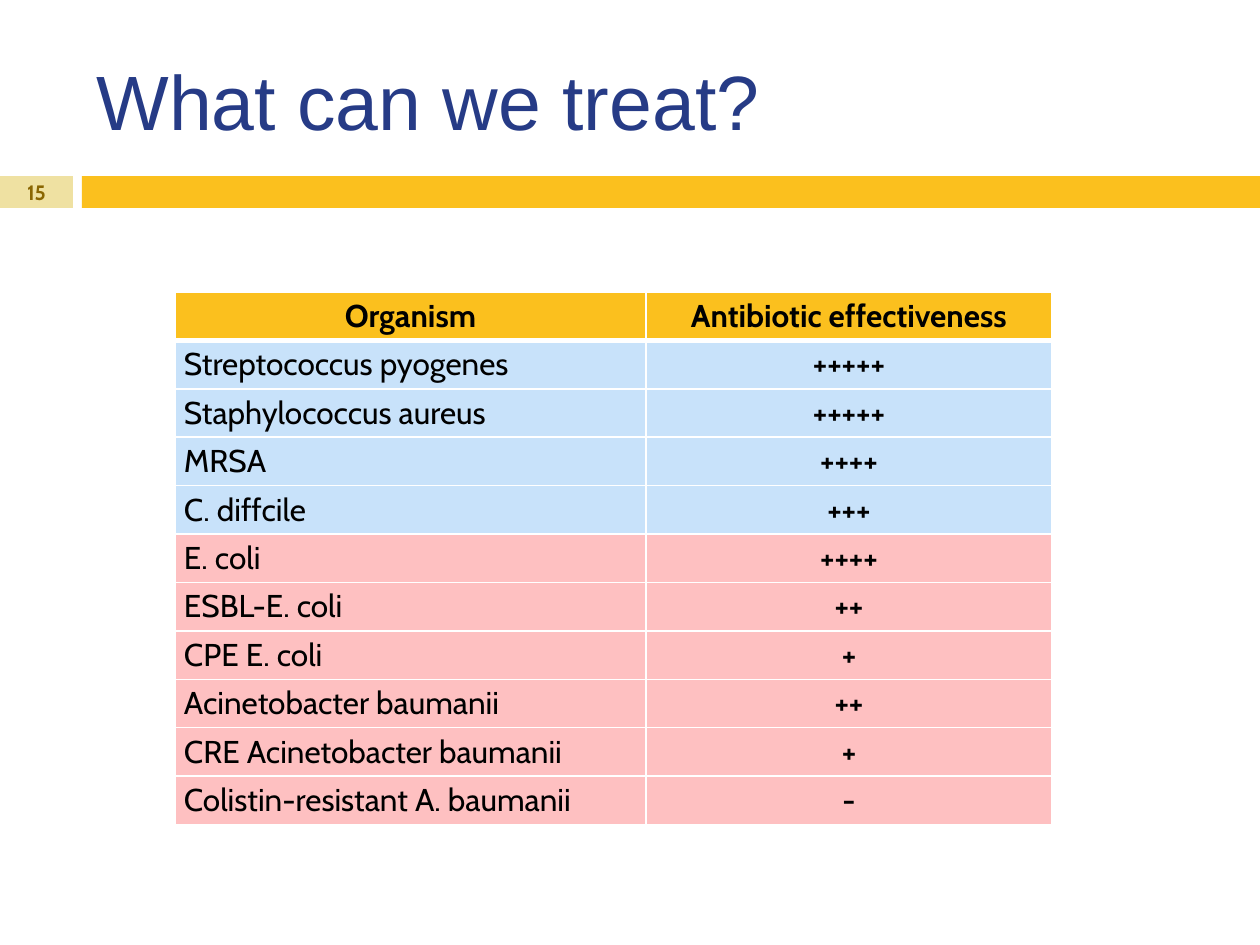
from dataclasses import dataclass

from lxml.etree import SubElement
from pptx import Presentation
from pptx.dml.color import RGBColor
from pptx.enum.shapes import MSO_SHAPE
from pptx.enum.text import MSO_ANCHOR, MSO_AUTO_SIZE, PP_ALIGN
from pptx.oxml.ns import qn
from pptx.util import Emu, Pt

PIXELS_PER_INCH = 126


@dataclass(frozen=True)
class Theme:
    gold: str = "FBC01E"
    pale_gold: str = "EFE1A2"
    dark_gold: str = "8A6602"
    navy: str = "263B86"
    blue: str = "C8E2FA"
    pink: str = "FEC0C1"
    white: str = "FFFFFF"
    black: str = "000000"
    title_font: str = "Arial"
    body_font: str = "Cabin"
    title_size: float = 44
    table_size: float = 18
    number_size: float = 11.9


@dataclass(frozen=True)
class Box:
    left: int
    top: int
    width: int
    height: int

    def lengths(self) -> tuple:
        return px(self.left), px(self.top), px(self.width), px(self.height)


@dataclass(frozen=True)
class Organism:
    name: str
    effectiveness: str
    fill: str


THEME = Theme()
TITLE_BOX = Box(84, 32, 1124, 136)
NUMBER_BOX = Box(0, 176, 73, 32)
BAR_BOX = Box(82, 176, 1178, 32)
TABLE_LEFT, TABLE_TOP, ROW_HEIGHT = 175, 292, 47
COLUMN_WIDTHS = (471, 406)
HEADINGS = ("Organism", "Antibiotic effectiveness")
ORGANISMS = (
    Organism("Streptococcus pyogenes", "+++++", THEME.blue),
    Organism("Staphylococcus aureus", "+++++", THEME.blue),
    Organism("MRSA", "++++", THEME.blue),
    Organism("C. diffcile", "+++", THEME.blue),
    Organism("E. coli", "++++", THEME.pink),
    Organism("ESBL-E. coli", "++", THEME.pink),
    Organism("CPE E. coli", "+", THEME.pink),
    Organism("Acinetobacter baumanii", "++", THEME.pink),
    Organism("CRE Acinetobacter baumanii", "+", THEME.pink),
    Organism("Colistin-resistant A. baumanii", "-", THEME.pink),
)


def px(length: int) -> Emu:
    return Emu(round(length * 914400 / PIXELS_PER_INCH))


def write(frame, text: str, *, size: float, color: str = THEME.black,
          font: str = THEME.body_font, bold: bool = False,
          align=PP_ALIGN.LEFT) -> None:
    para = frame.paragraphs[0]
    para.alignment = align
    span = para.add_run()
    span.text = text
    span.font.name = font
    span.font.size = Pt(size)
    span.font.bold = bold
    span.font.color.rgb = RGBColor.from_string(color)


def add_title(page, text: str) -> None:
    title = page.shapes.title
    title.left, title.top, title.width, title.height = TITLE_BOX.lengths()
    frame = title.text_frame
    frame.auto_size = MSO_AUTO_SIZE.NONE
    frame.vertical_anchor = MSO_ANCHOR.MIDDLE
    write(frame, text, size=THEME.title_size, color=THEME.navy,
          font=THEME.title_font)


def add_bar(page, box: Box, fill: str):
    bar = page.shapes.add_shape(MSO_SHAPE.RECTANGLE, *box.lengths())
    bar.shadow.inherit = False
    bar.fill.solid()
    bar.fill.fore_color.rgb = RGBColor.from_string(fill)
    bar.line.fill.background()
    return bar


def add_page_number(page, number: str) -> None:
    frame = add_bar(page, NUMBER_BOX, THEME.pale_gold).text_frame
    frame.margin_left = frame.margin_right = 0
    frame.margin_top = frame.margin_bottom = 0
    frame.vertical_anchor = MSO_ANCHOR.MIDDLE
    write(frame, number, size=THEME.number_size, color=THEME.dark_gold,
          bold=True, align=PP_ALIGN.CENTER)


def set_borders(cell, **widths: int) -> None:
    properties = cell._tc.get_or_add_tcPr()
    for position, (side, width) in enumerate(widths.items()):
        line = properties.makeelement(qn(f"a:ln{side}"), {"w": str(Pt(width))})
        fill = SubElement(line, qn("a:solidFill"))
        SubElement(fill, qn("a:srgbClr"), val=THEME.white)
        properties.insert(position, line)


def fill_cell(cell, text: str, *, fill: str, bold: bool, align,
              top: int = 1, bottom: int = 1) -> None:
    cell.margin_left = cell.margin_right = px(9)
    cell.margin_top = cell.margin_bottom = px(5)
    cell.fill.solid()
    cell.fill.fore_color.rgb = RGBColor.from_string(fill)
    set_borders(cell, L=1, R=1, T=top, B=bottom)
    write(cell.text_frame, text, size=THEME.table_size, bold=bold, align=align)


def add_organism_table(page) -> None:
    row_count = len(ORGANISMS) + 1
    box = Box(TABLE_LEFT, TABLE_TOP, sum(COLUMN_WIDTHS), ROW_HEIGHT * row_count)
    table = page.shapes.add_table(
        row_count, len(COLUMN_WIDTHS), *box.lengths()).table
    table.horz_banding = False
    for column, width in zip(table.columns, COLUMN_WIDTHS):
        column.width = px(width)
    for row in table.rows:
        row.height = px(ROW_HEIGHT)
    for column, heading in enumerate(HEADINGS):
        fill_cell(table.cell(0, column), heading, fill=THEME.gold, bold=True,
                  align=PP_ALIGN.CENTER, bottom=3)
    for row, organism in enumerate(ORGANISMS, start=1):
        top = 3 if row == 1 else 1
        fill_cell(table.cell(row, 0), organism.name, fill=organism.fill,
                  bold=False, align=PP_ALIGN.LEFT, top=top)
        fill_cell(table.cell(row, 1), organism.effectiveness,
                  fill=organism.fill, bold=True, align=PP_ALIGN.CENTER, top=top)


def main() -> None:
    deck = Presentation()
    deck.slide_width, deck.slide_height = px(1260), px(945)
    page = deck.slides.add_slide(deck.slide_layouts.get_by_name("Title Only"))
    add_title(page, "What can we treat?")
    add_page_number(page, "15")
    add_bar(page, BAR_BOX, THEME.gold)
    add_organism_table(page)
    deck.save("out.pptx")


if __name__ == "__main__":
    main()
